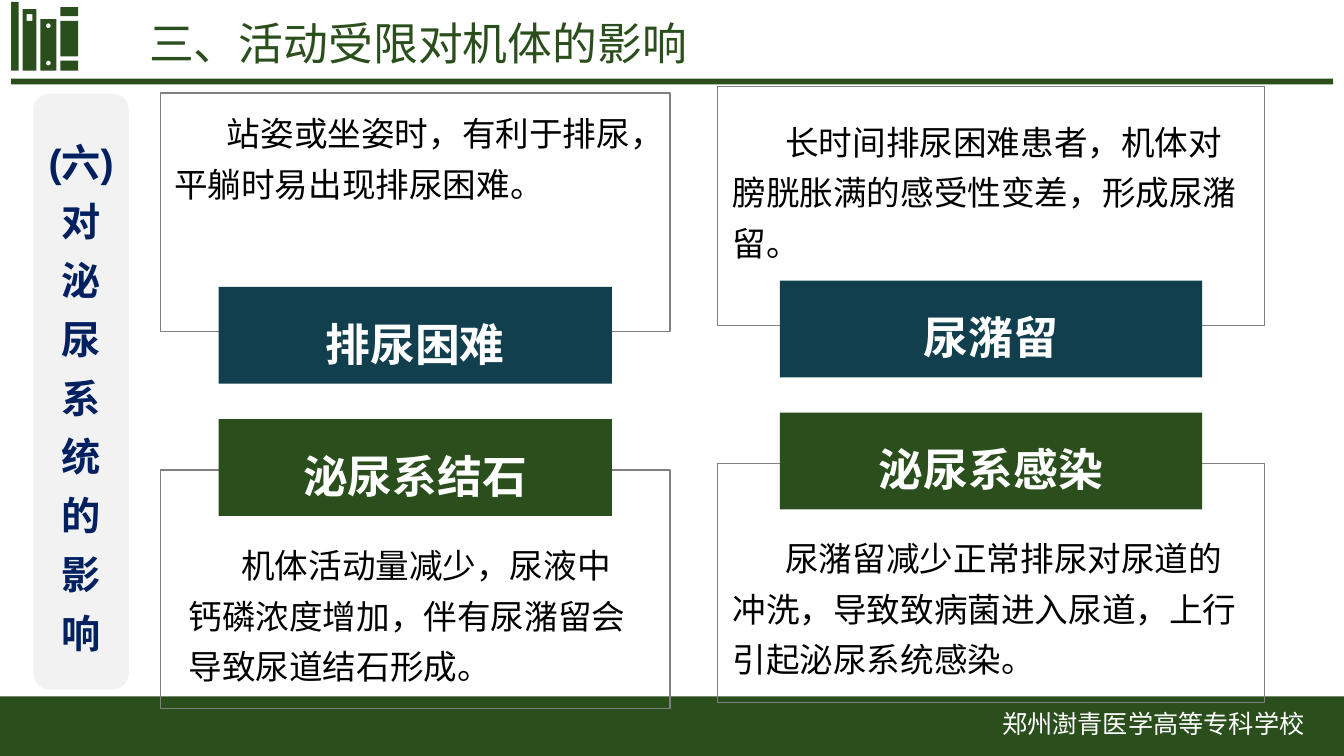
from dataclasses import dataclass
from math import cos, pi, sin

from pptx import Presentation
from pptx.dml.color import RGBColor
from pptx.enum.shapes import MSO_SHAPE
from pptx.enum.text import MSO_ANCHOR, MSO_AUTO_SIZE, PP_ALIGN
from pptx.oxml.ns import qn
from pptx.util import Cm, Pt


@dataclass(frozen=True)
class Theme:
    green: str = "2A4F1C"
    teal: str = "113F4E"
    navy: str = "002060"
    pale: str = "F2F2F2"
    gray: str = "808080"
    black: str = "000000"
    white: str = "FFFFFF"
    title: int = 32
    label: int = 32
    side: int = 28
    body: int = 24
    footer: int = 18
    latin: str = "Arial"
    chinese: str = "Noto Sans CJK SC"


THEME = Theme()
PAGE_WIDTH, PAGE_HEIGHT = 33.87, 19.05
FRAME_HEIGHT, LABEL_HEIGHT, ROW_STEP = 6.02, 2.44, 9.5


def color(code):
    return RGBColor.from_string(code)


def lengths(box):
    return [Cm(value) for value in box]


def paint(shape, fill=None, line=None):
    shape.shadow.inherit = False
    if fill:
        shape.fill.solid()
        shape.fill.fore_color.rgb = color(fill)
    else:
        shape.fill.background()
    if line:
        shape.line.color.rgb = color(line)
        shape.line.width = Pt(1)
    else:
        shape.line.fill.background()
    return shape


def add_block(page, box, fill=None, line=None, kind=MSO_SHAPE.RECTANGLE):
    return paint(page.shapes.add_shape(kind, *lengths(box)), fill, line)


def add_outline(page, contours, fill):
    """One freeform; every contour after the first is a hole."""
    first, *holes = [[tuple(lengths(point)) for point in contour] for contour in contours]
    builder = page.shapes.build_freeform(*first[0])
    builder.add_line_segments(first[1:])
    for hole in holes:
        builder.move_to(*hole[0])
        builder.add_line_segments(hole[1:])
    return paint(builder.convert_to_shape(), fill)


def write(shape, spans, size, ink, bold=False, align=PP_ALIGN.LEFT, spacing=None, indent=0):
    """Fill a shape with one paragraph; spans are (text, font) pairs."""
    frame = shape.text_frame
    frame.word_wrap = True
    para = frame.paragraphs[0]
    para.alignment = align
    para.line_spacing = spacing
    if indent:
        para._p.get_or_add_pPr().set("indent", str(Cm(indent)))
    for text, font in spans:
        span = para.add_run()
        span.text = text
        span.font.name = font
        span.font.size = Pt(size)
        span.font.bold = bold
        span.font.color.rgb = color(ink)
        east_asian = span._r.get_or_add_rPr().makeelement(
            qn("a:ea"), {"typeface": THEME.chinese})
        span._r.rPr.find(qn("a:latin")).addnext(east_asian)
    return frame


def add_text(page, box, *args, **options):
    return write(page.shapes.add_textbox(*lengths(box)), *args, **options)


def rectangle(left, top, width, height):
    right, bottom = left + width, top + height
    return [(left, top), (right, top), (right, bottom), (left, bottom), (left, top)]


def circle(x, y, radius, steps=24):
    turns = [2 * pi * step / steps for step in range(steps + 1)]
    return [(x + radius * cos(turn), y + radius * sin(turn)) for turn in turns]


def draw_books(page, left, top):
    # Plain spine, then the three pieces of the striped spine
    for x, y, width, height in [(0, 0, 0.19, 1.73), (1.24, 1.48, 0.45, 0.25),
                                (1.24, 0.48, 0.45, 0.89), (1.24, 0.13, 0.45, 0.23)]:
        add_block(page, (left + x, top + y, width, height), THEME.green)
    # Folder with two round holes, folder with a square hole
    add_outline(page, [rectangle(left + 0.74, top + 0.43, 0.4, 1.3),
                       circle(left + 0.94, top + 0.6, 0.06),
                       circle(left + 0.94, top + 1.54, 0.06)], THEME.green)
    add_outline(page, [rectangle(left + 0.29, top + 0.18, 0.35, 1.55),
                       rectangle(left + 0.39, top + 0.31, 0.15, 0.17)], THEME.green)


def draw_header(page, left, top, width):
    add_block(page, (left, top + 1.93, width, 0.15), THEME.green)
    draw_books(page, left, top)
    add_text(page, (left + 3.23, top + 0.23, 21.67, 1.6),
             [("三、", THEME.latin), ("活动受限对机体的影响", THEME.chinese)],
             THEME.title, THEME.green)


def draw_footer_band(page, top):
    add_block(page, (0, top, PAGE_WIDTH, PAGE_HEIGHT - top), THEME.green)


def draw_school(page, box):
    add_text(page, box, [("郑州澍青医学高等专科学校", THEME.chinese)],
             THEME.footer, THEME.white, align=PP_ALIGN.CENTER)


def draw_side_panel(page, box):
    panel = add_block(page, box, THEME.pale, kind=MSO_SHAPE.ROUNDED_RECTANGLE)
    frame = write(panel, [("(六)对泌尿系统的影响", THEME.latin)], THEME.side, THEME.navy,
                  bold=True, align=PP_ALIGN.CENTER, spacing=1.25)
    frame.vertical_anchor = MSO_ANCHOR.MIDDLE


def draw_card(page, left, top, width, label_width, label_top, fill, share, label, body, body_box):
    """Framed text with a label centred across one edge of the frame."""
    add_block(page, (left, top, width, FRAME_HEIGHT), line=THEME.gray)
    x, y, body_width, body_height = body_box
    frame = add_text(page, (left + x, top + y, body_width, body_height),
                     [(body, THEME.chinese)], THEME.body, THEME.black,
                     spacing=1.25, indent=1.33)
    frame.auto_size = MSO_AUTO_SIZE.SHAPE_TO_FIT_TEXT

    center = left + width / 2
    add_block(page, (center - label_width / 2, top + label_top, label_width, LABEL_HEIGHT), fill)
    text_width = label_width * share
    frame = add_text(page, (center - text_width / 2, top + label_top + 0.27, text_width, 1.96),
                     [(label, THEME.chinese)], THEME.label, THEME.white,
                     bold=True, align=PP_ALIGN.CENTER, spacing=1.25)
    frame.vertical_anchor = MSO_ANCHOR.MIDDLE
    frame.auto_size = MSO_AUTO_SIZE.SHAPE_TO_FIT_TEXT


def draw_column(page, left, top, width, label_width, upper, lower):
    draw_card(page, left, top, width, label_width, 4.89, THEME.teal, 0.79, *upper)
    draw_card(page, left, top + ROW_STEP, width, label_width, -1.28, THEME.green, 0.89, *lower)


def main():
    deck = Presentation()
    deck.slide_width, deck.slide_height = Cm(PAGE_WIDTH), Cm(PAGE_HEIGHT)
    page = deck.slides.add_slide(deck.slide_layouts[6])

    # Page furniture
    draw_header(page, 0.28, 0.05, 33.32)
    draw_footer_band(page, 17.55)
    draw_side_panel(page, (0.84, 2.36, 2.41, 15.01))

    # Two columns of cards: label, text, text box within the frame
    draw_column(
        page, 4.04, 2.34, 12.85, 9.91,
        ("排尿困难", "站姿或坐姿时，有利于排尿，平躺时易出现排尿困难。",
         (0.1, 0.13, 12.6, 2.82)),
        ("泌尿系结石", "机体活动量减少，尿液中钙磷浓度增加，伴有尿潴留会导致尿道结石形成。",
         (0.46, 1.52, 11.91, 4.11)))
    draw_column(
        page, 18.08, 2.18, 13.79, 10.64,
        ("尿潴留", "长时间排尿困难患者，机体对膀胱胀满的感受性变差，形成尿潴留。",
         (0.13, 0.51, 13.54, 4.11)),
        ("泌尿系感染", "尿潴留减少正常排尿对尿道的冲洗，导致致病菌进入尿道，上行引起泌尿系统感染。",
         (0.13, 1.5, 13.67, 4.11)))

    draw_school(page, (24.26, 17.73, 9.61, 1.17))
    deck.save("out.pptx")


if __name__ == "__main__":
    main()
